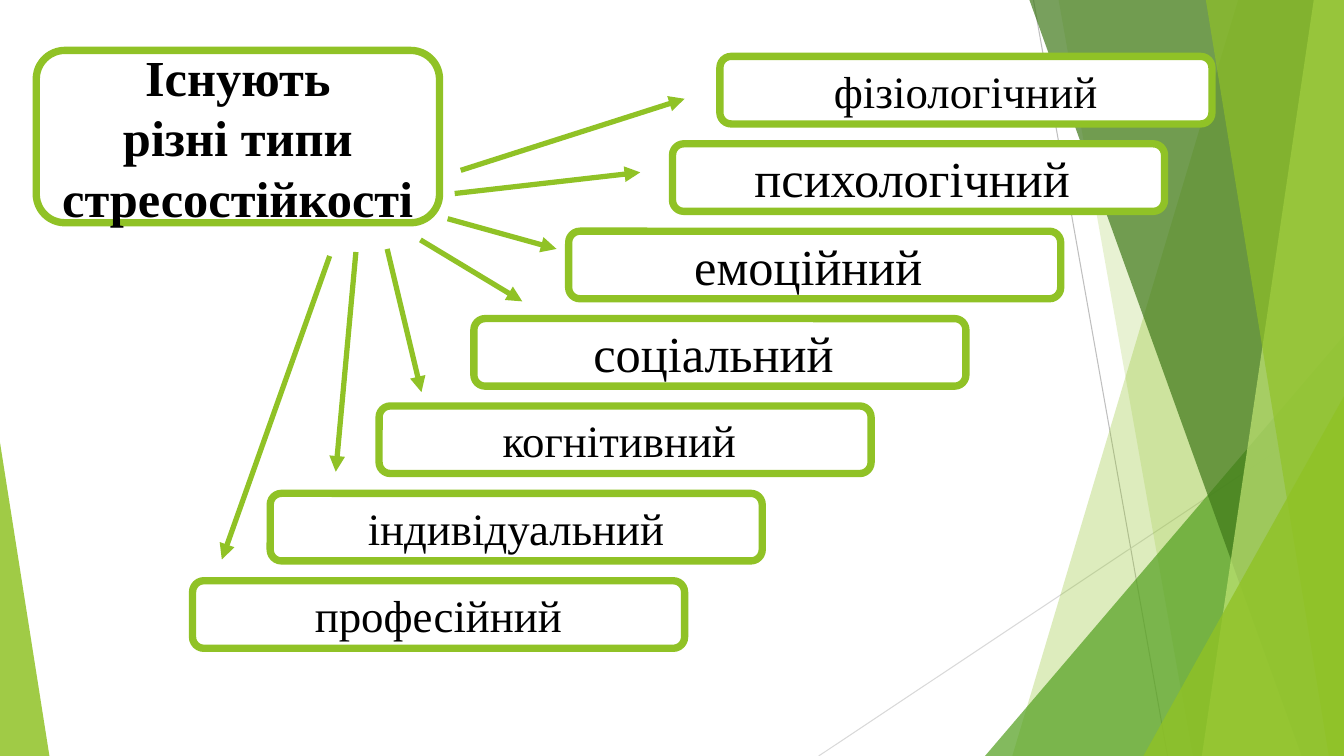
import lxml.etree
import pptx
import pptx.dml.color
import pptx.enum.shapes
import pptx.enum.text
import pptx.oxml
import pptx.oxml.ns
import pptx.util

Inches = pptx.util.Inches
RGBColor = pptx.dml.color.RGBColor
SHAPE = pptx.enum.shapes.MSO_SHAPE
STRAIGHT = pptx.enum.shapes.MSO_CONNECTOR.STRAIGHT
qn = pptx.oxml.ns.qn

WHITE = RGBColor(0xFF, 0xFF, 0xFF)
BLACK = RGBColor(0x00, 0x00, 0x00)
LIME = RGBColor(0x90, 0xC2, 0x26)
PALE_LIME = RGBColor(0xC0, 0xE4, 0x74)
GREEN = RGBColor(0x54, 0xA0, 0x21)
DARK_GREEN = RGBColor(0x3F, 0x78, 0x19)
GREY = RGBColor(0xBF, 0xBF, 0xBF)
LIGHT_GREY = RGBColor(0xD9, 0xD9, 0xD9)

PAGE_WIDTH, PAGE_HEIGHT = 13.33, 7.5
TYPE_WIDTH, TYPE_HEIGHT, TYPE_STEP = 4.88, 0.67, 0.867

STRESS_TYPES = [
    ("фізіологічний", 5.23, 32),
    ("психологічний ", 4.76, 36),
    ("емоційний ", 3.73, 36),
    ("соціальний ", 2.79, 36),
    ("когнітивний ", 1.85, 32),
    ("індивідуальний", 0.77, 32),
    ("професійний", 0, 32),
]
ARROWS = [
    ((4.57, 1.69), (6.79, 0.98)),
    ((4.51, 1.92), (6.35, 1.71)),
    ((4.44, 2.17), (5.52, 2.47)),
    ((4.17, 2.38), (5.18, 2.99)),
    ((3.84, 2.47), (4.18, 3.89)),
    ((3.53, 2.5), (3.33, 4.68)),
    ((3.27, 2.54), (2.2, 5.55)),
]


def add_line(page, start, end, color, weight):
    line = page.shapes.add_connector(STRAIGHT, *map(Inches, start + end))
    line.line.color.rgb = color
    line.line.width = pptx.util.Pt(weight)
    lxml.etree.SubElement(line._element.spPr, qn("a:effectLst"))
    return line


def fill_translucent(shape, color, percent):
    shape.shadow.inherit = False
    shape.fill.solid()
    shape.fill.fore_color.rgb = color
    shape.line.fill.background()
    tint = shape._element.spPr.find(qn("a:solidFill"))[0]
    lxml.etree.SubElement(tint, qn("a:alpha"), val=str(percent * 1000))


def add_band(page, box, top_x, bottom_x, color, percent):
    left, top, width, height = box
    right, bottom = left + width, top + height
    corners = [(left + top_x, top), (right, top), (right, bottom), (left + bottom_x, bottom)]
    points = [(Inches(x), Inches(y)) for x, y in corners]
    builder = page.shapes.build_freeform(*points[0])
    builder.add_line_segments(points[1:], close=True)
    fill_translucent(builder.convert_to_shape(), color, percent)


def add_triangle(page, box, apex, color, percent):
    triangle = page.shapes.add_shape(SHAPE.ISOSCELES_TRIANGLE, *map(Inches, box))
    triangle.adjustments[0] = apex
    fill_translucent(triangle, color, percent)


def add_facets(page, box):
    left, top, width, height = box
    right, bottom = left + width, top + height
    add_line(page, (left + 2.13, top), (left + 3.46, bottom), GREY, 0.75)
    add_line(page, (right, top + 4.03), (left, bottom), LIGHT_GREY, 0.75)
    add_band(page, box, 4.16, 1.92, LIME, 30)
    add_band(page, box, 2.38, 3.71, LIME, 20)
    add_triangle(page, (right - 3.56, bottom - 4.17, 3.56, 4.17), 1, GREEN, 72)
    add_band(page, box, 2.09, 4.79, DARK_GREEN, 70)
    add_band(page, box, 4.91, 3.8, PALE_LIME, 70)
    add_band(page, box, 3.84, 5.06, LIME, 65)
    add_triangle(page, (right - 1.99, bottom - 3.57, 1.99, 3.57), 1, LIME, 80)


def add_card(page, box, text, size, bold=False):
    card = page.shapes.add_shape(SHAPE.ROUNDED_RECTANGLE, *map(Inches, box))
    card.shadow.inherit = False
    card.fill.solid()
    card.fill.fore_color.rgb = WHITE
    card.line.color.rgb = LIME
    card.line.width = pptx.util.Pt(5.25)
    frame = card.text_frame
    frame.word_wrap = True
    frame.vertical_anchor = pptx.enum.text.MSO_ANCHOR.MIDDLE
    para = frame.paragraphs[0]
    para.text = text
    para.alignment = pptx.enum.text.PP_ALIGN.CENTER
    font_format = {"name": "Times New Roman", "size": pptx.util.Pt(size), "bold": bold}
    for span in para.runs:
        for attribute, value in font_format.items():
            setattr(span.font, attribute, value)
        span.font.color.rgb = BLACK


def add_type_stairs(page, box):
    left, top, _, _ = box
    for index, (name, offset, size) in enumerate(STRESS_TYPES):
        place = (left + offset, top + index * TYPE_STEP, TYPE_WIDTH, TYPE_HEIGHT)
        add_card(page, place, name, size)


def add_arrows(page, box):
    left, top, _, _ = box
    for (start_x, start_y), (end_x, end_y) in ARROWS:
        start = (left + start_x, top + start_y)
        end = (left + end_x, top + end_y)
        arrow = add_line(page, start, end, LIME, 3.75)
        outline = arrow._element.spPr.find(qn("a:ln"))
        lxml.etree.SubElement(outline, qn("a:tailEnd"), type="triangle")


def main():
    deck = pptx.Presentation()
    deck.slide_width = Inches(PAGE_WIDTH)
    deck.slide_height = Inches(PAGE_HEIGHT)
    page = deck.slides.add_slide(deck.slide_layouts[6])
    add_facets(page, (8.12, 0, PAGE_WIDTH - 8.12, PAGE_HEIGHT))
    add_triangle(page, (0, 4.39, 0.49, 3.11), 0, LIME, 85)
    add_type_stairs(page, (1.91, 0.56, 10.11, 5.87))
    add_card(page, (0.36, 0.5, 4, 1.71), " Існують \vрізні типи стресостійкості", 36, True)
    add_arrows(page, (0, 0, PAGE_WIDTH, PAGE_HEIGHT))
    deck.save("out.pptx")


if __name__ == "__main__":
    main()
